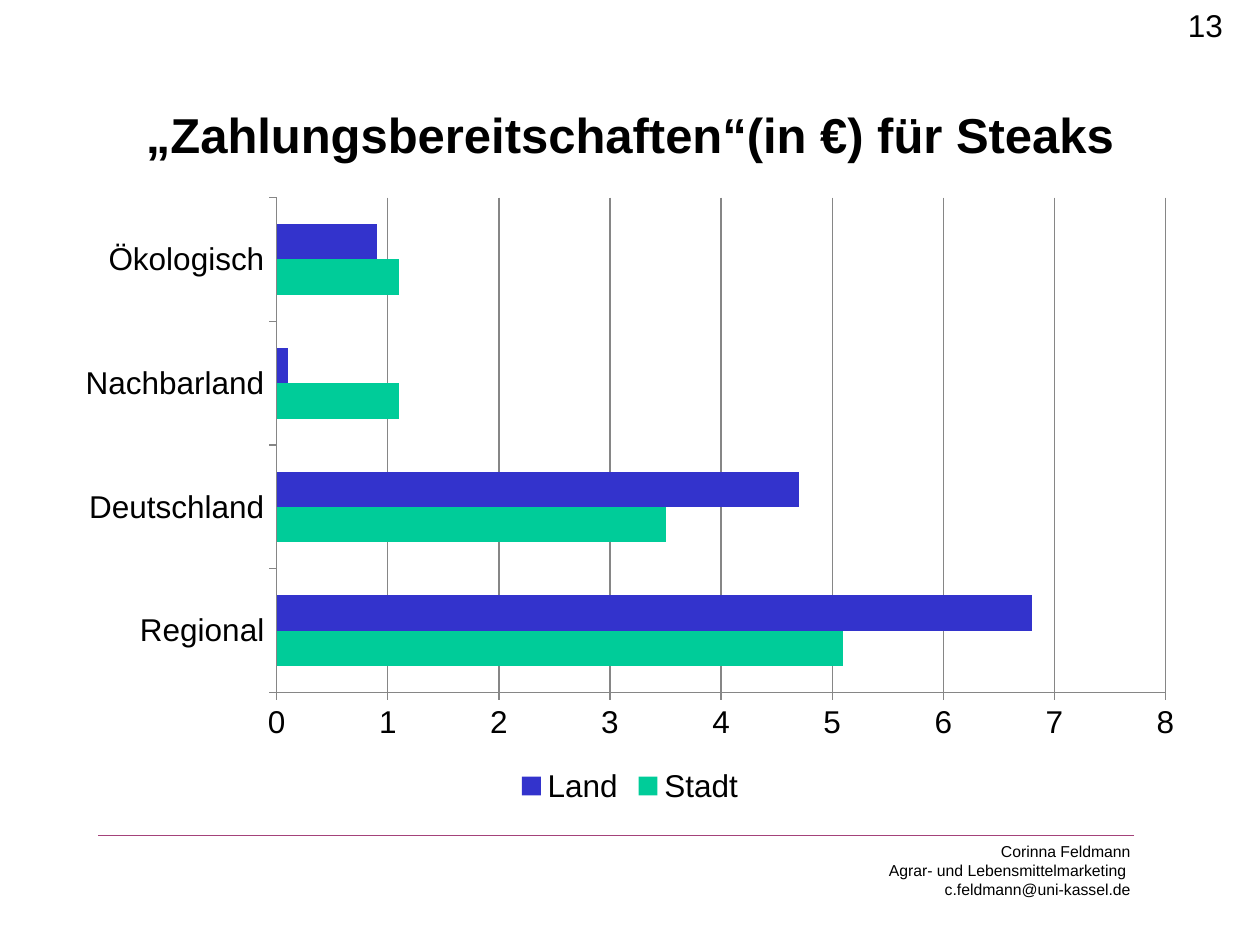
"""Build a slide with a bar chart of what town and country would pay for steaks."""
from dataclasses import dataclass
from typing import Any

import lxml.etree
import pptx
import pptx.chart.data
import pptx.dml.color
import pptx.enum.chart
import pptx.enum.shapes
import pptx.enum.text
import pptx.oxml.ns
import pptx.util

Inches = pptx.util.Inches
Pt = pptx.util.Pt
RGB = pptx.dml.color.RGBColor
Align = pptx.enum.text.PP_ALIGN
Anchor = pptx.enum.text.MSO_ANCHOR
Fit = pptx.enum.text.MSO_AUTO_SIZE
Tick = pptx.enum.chart.XL_TICK_MARK


@dataclass(frozen=True)
class Theme:
    face: str = "Arial"
    ink: RGB = RGB(0x00, 0x00, 0x00)
    rule: RGB = RGB(0xA4, 0x42, 0x7A)
    grid: RGB = RGB(0x86, 0x86, 0x86)
    land: RGB = RGB(0x33, 0x33, 0xCC)
    town: RGB = RGB(0x00, 0xCC, 0x99)
    head: int = 28
    body: int = 18
    foot: int = 9


@dataclass(frozen=True)
class Label:
    lines: tuple[str, ...]
    box: tuple[float, float, float, float]
    size: int
    align: Align = Align.LEFT
    anchor: Anchor = Anchor.TOP
    fit: Fit = Fit.NONE
    bold: bool = False


@dataclass(frozen=True)
class Bars:
    name: str
    vals: tuple[float, ...]
    tint: RGB


THEME = Theme()
LABELS = (
    Label(("Corinna Feldmann", "Agrar- und Lebensmittelmarketing ", "c.feldmann@uni-kassel.de"),
          (5.22, 6.63, 3.85, 0.56), THEME.foot, Align.RIGHT, fit=Fit.SHAPE_TO_FIT_TEXT),
    Label(("„Zahlungsbereitschaften“(in €) für Steaks",), (0.75, 0.44, 8.5, 1.25),
          THEME.head, Align.CENTER, Anchor.MIDDLE, bold=True),
    Label(("13",), (9.33, 0, 0.67, 0.52), THEME.body),
)
GROUPS = ("Regional", "Deutschland", "Nachbarland", "Ökologisch")
SERIES = (
    Bars("Stadt", (5.1, 3.5, 1.1, 1.1), THEME.town),
    Bars("Land", (6.8, 4.7, 0.1, 0.9), THEME.land),
)


def apply(item: Any, form: dict[str, Any]) -> None:
    """Set each format value on the item."""
    for key, value in form.items():
        setattr(item, key, value)


def style(font: Any, size: int, bold: bool = False) -> None:
    """Give a font the theme face and ink."""
    apply(font, {"name": THEME.face, "size": Pt(size), "bold": bold})
    font.color.rgb = THEME.ink


def stroke(line: Any, tint: RGB) -> None:
    """Draw a thin line in one tint."""
    line.color.rgb = tint
    line.width = Pt(0.75)


def add_label(slide: Any, label: Label) -> None:
    """Add a text box with one paragraph per line."""
    frame = slide.shapes.add_textbox(*map(Inches, label.box)).text_frame
    apply(frame, {"word_wrap": True, "auto_size": label.fit, "vertical_anchor": label.anchor})
    frame.text = "\n".join(label.lines)
    for para in frame.paragraphs:
        para.alignment = label.align
        style(para.runs[0].font, label.size, label.bold)


def add_rule(slide: Any) -> None:
    """Add the line above the footer."""
    rule = slide.shapes.add_connector(
        pptx.enum.shapes.MSO_CONNECTOR.STRAIGHT,
        Inches(9), Inches(6.63), Inches(0.78), Inches(6.63))
    stroke(rule.line, THEME.rule)
    lxml.etree.SubElement(rule._element.spPr, pptx.oxml.ns.qn("a:effectLst"))


def add_bars(slide: Any) -> None:
    """Add the clustered bar chart."""
    data = pptx.chart.data.CategoryChartData()
    data.categories = GROUPS
    for bars in SERIES:
        data.add_series(bars.name, bars.vals)
    chart = slide.shapes.add_chart(
        pptx.enum.chart.XL_CHART_TYPE.BAR_CLUSTERED,
        *map(Inches, (0.5, 1.47, 9, 4.96)), data).chart
    style(chart.font, THEME.body)
    apply(chart, {"has_title": False, "has_legend": True})
    apply(chart.legend, {"position": pptx.enum.chart.XL_LEGEND_POSITION.BOTTOM,
                         "include_in_layout": False})
    plot = chart.plots[0]
    apply(plot, {"gap_width": 150, "vary_by_categories": False})
    for bars, series in zip(SERIES, plot.series):
        series.format.fill.solid()
        series.format.fill.fore_color.rgb = bars.tint
    for axis in (chart.category_axis, chart.value_axis):
        apply(axis, {"major_tick_mark": Tick.OUTSIDE, "minor_tick_mark": Tick.NONE})
        stroke(axis.format.line, THEME.grid)
    apply(chart.value_axis, {"minimum_scale": 0, "maximum_scale": 8, "major_unit": 1,
                             "has_major_gridlines": True})
    stroke(chart.value_axis.major_gridlines.format.line, THEME.grid)


def main() -> None:
    """Build and save the slide."""
    deck = pptx.Presentation()
    apply(deck, {"slide_width": Inches(10), "slide_height": Inches(7.5)})
    slide = deck.slides.add_slide(deck.slide_layouts[6])
    add_rule(slide)
    add_bars(slide)
    for label in LABELS:
        add_label(slide, label)
    deck.save("out.pptx")


if __name__ == "__main__":
    main()
